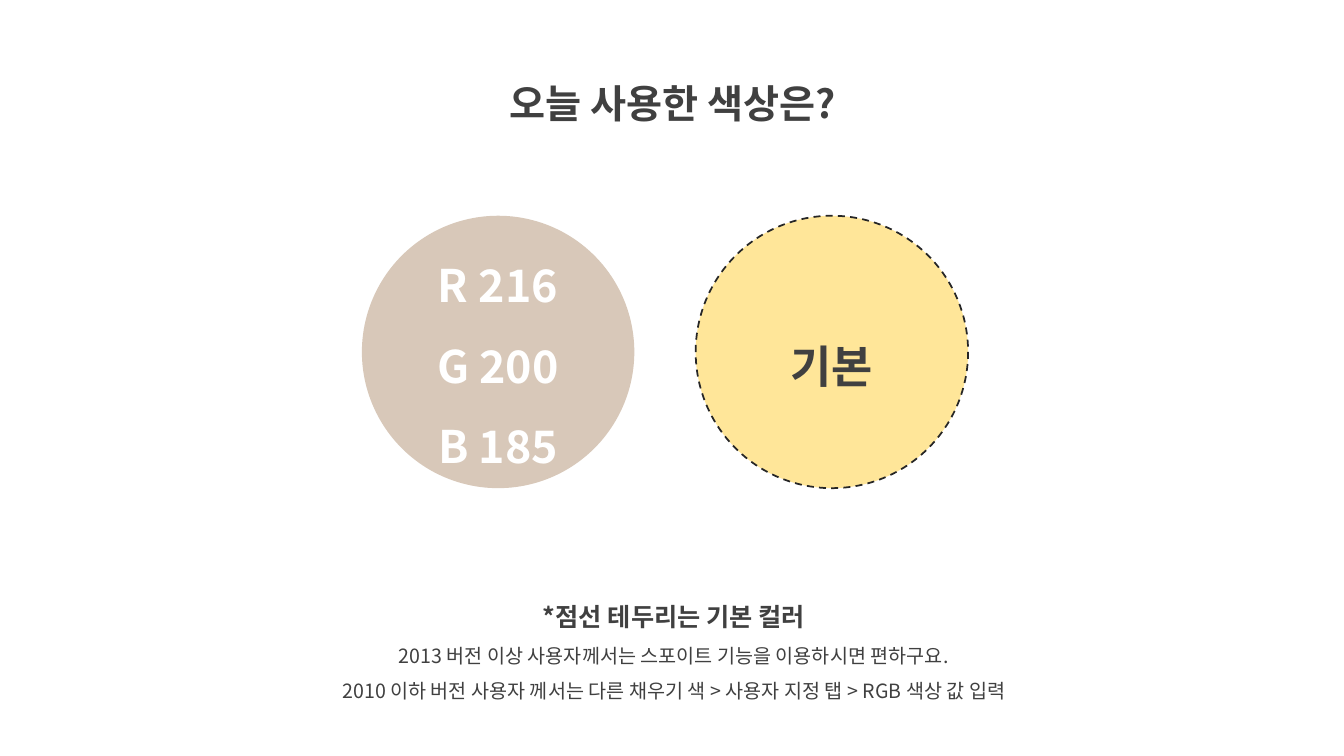
from pptx import Presentation
from pptx.dml.color import RGBColor as RGB
from pptx.enum.dml import MSO_LINE as Dash
from pptx.enum.shapes import MSO_SHAPE as Shape
from pptx.enum.text import MSO_ANCHOR as Anchor, MSO_AUTO_SIZE as Fit, PP_ALIGN as Align
from pptx.oxml.ns import qn
from pptx.util import Pt
from lxml import etree

FONT = "Noto Sans CJK KR"
DARK = "404040"


def paint(target, color):
    """Give a font or a fill a solid colour."""
    if hasattr(target, "solid"):
        target.solid()
        target.fore_color.rgb = RGB.from_string(color)
    else:
        target.color.rgb = RGB.from_string(color)


def write(frame, lines, color, anchor):
    """Fill a frame with centred (text, size, bold) lines."""
    frame.word_wrap = True
    frame.vertical_anchor = anchor
    for i, (text, size, bold) in enumerate(lines):
        para = frame.paragraphs[0] if i == 0 else frame.add_paragraph()
        para.text = text
        para.alignment = Align.CENTER
        para.line_spacing = 1.5
        para.space_before = para.space_after = Pt(0)
        font = para.font
        font.name, font.size, font.bold = FONT, Pt(size), bold
        paint(font, color)
        # Korean typeface, no bullet and no indent
        props = para._p.pPr
        props.set("marL", "0")
        props.set("indent", "0")
        base = props.find(qn("a:defRPr"))
        etree.SubElement(base, qn("a:ea")).set("typeface", FONT)
        base.addprevious(etree.Element(qn("a:buNone")))


def place(holder, box, lines):
    """Move a placeholder into its box and write its lines."""
    holder.left, holder.top, holder.width, holder.height = map(Pt, box)
    write(holder.text_frame, lines, DARK, Anchor.TOP)
    holder.text_frame.auto_size = Fit.SHAPE_TO_FIT_TEXT


def swatch(slide, box, fill, labels, color, edge=None):
    """Draw one colour circle, with a dashed edge if asked."""
    disc = slide.shapes.add_shape(Shape.OVAL, *map(Pt, box))
    disc.shadow.inherit = False
    paint(disc.fill, fill)
    if edge:
        paint(disc.line, edge)
        disc.line.width = Pt(1.25)
        disc.line.dash_style = Dash.DASH
    else:
        disc.line.fill.background()
    write(disc.text_frame, [(label, 32, True) for label in labels],
          color, Anchor.MIDDLE)


def palette(slide, left, top, size, step):
    """Set the colour circles in a row."""
    discs = [
        ("D8C8B9", ["R 216", "G 200", "B 185"], "FFFFFF", None),
        ("FFE699", ["기본"], DARK, "262626"),
    ]
    for i, disc in enumerate(discs):
        swatch(slide, (left + i * step, top, size, size), *disc)


def main():
    deck = Presentation()
    deck.slide_width, deck.slide_height = Pt(960), Pt(540)
    slide = deck.slides.add_slide(deck.slide_layouts[1])

    # Title
    place(slide.shapes.title, (313.9, 36, 333.4, 51.8),
          [("오늘 사용한 색상은?", 28, True)])

    # Notes on the colours
    place(slide.placeholders[1], (193.7, 415.4, 575.3, 90.7), [
        ("*점선 테두리는 기본 컬러", 18, True),
        ("2013 버전 이상 사용자께서는 스포이트 기능을 이용하시면 편하구요.", 14, False),
        ("2010 이하 버전 사용자 께서는 다른 채우기 색 > 사용자 지정 탭 > RGB 색상 값 입력",
         14, False),
    ])

    # Colour circles
    palette(slide, 258.5, 154.1, 194.6, 238.4)

    deck.save("out.pptx")


if __name__ == "__main__":
    main()
